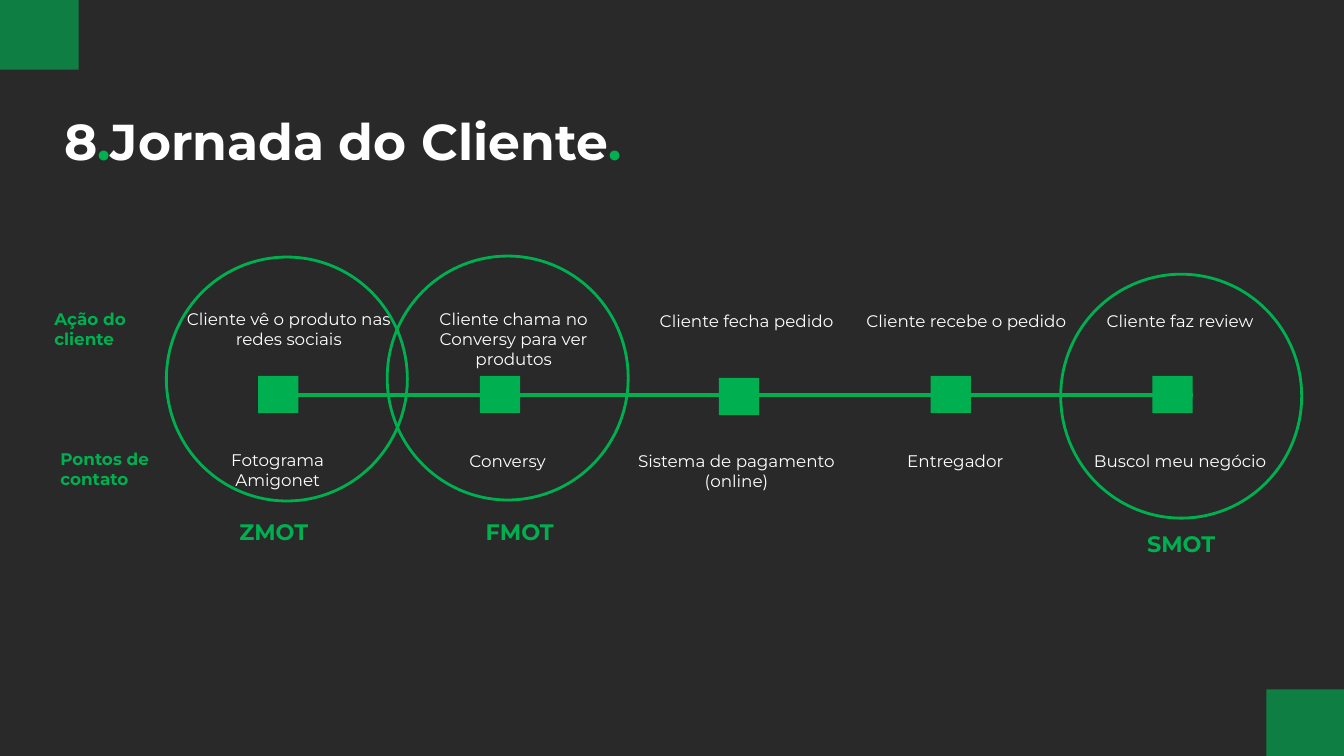
import dataclasses

import pptx
import pptx.dml.color
import pptx.enum.shapes
import pptx.enum.text
import pptx.util
from lxml import etree

Inches = pptx.util.Inches
SHAPES = pptx.enum.shapes.MSO_SHAPE
ALIGN = pptx.enum.text.PP_ALIGN


def rgb(code):
    return pptx.dml.color.RGBColor.from_string(code)


@dataclasses.dataclass(frozen=True)
class Theme:
    font: str = "Montserrat"
    background: object = rgb("292929")
    corner: object = rgb("0F7E42")
    green: object = rgb("00B050")
    white: object = rgb("FFFFFF")
    title_size: int = 36
    moment_size: int = 16
    body_size: int = 12
    track_width: int = 3
    circle_width: int = 2


THEME = Theme()

STEPS = [
    (2.56, 3.73, (1.73, 2.96), "Cliente vê o produto nas redes sociais",
     (1.62, 4.36), ["Fotograma", "Amigonet"]),
    (4.76, 3.73, (3.96, 2.96), "Cliente chama no Conversy para ver produtos",
     (3.9, 4.37), ["Conversy"]),
    (7.13, 3.75, (6.27, 2.98), "Cliente fecha pedido",
     (6.17, 4.37), ["Sistema de pagamento (online)"]),
    (9.23, 3.73, (8.45, 2.98), "Cliente recebe o pedido",
     (8.34, 4.37), ["Entregador"]),
    (11.43, 3.73, (10.57, 2.98), "Cliente faz review",
     (10.57, 4.37), ["Buscol meu negócio"]),
]

ROW_HEADINGS = [
    ("Ação do cliente", (0.44, 2.96)),
    ("Pontos de contato", (0.5, 4.35)),
]

MOMENTS = [
    ("ZMOT", (1.65, 2.55), (2.07, 5.04)),
    ("FMOT", (3.84, 2.54), (4.51, 5.04)),
    ("SMOT", (10.52, 2.72), (11.07, 5.16)),
]


def add_text(slide, place, size, paragraphs, points, bold=False,
             align=ALIGN.LEFT, vertical_inset=0.1):
    box = slide.shapes.add_textbox(*map(Inches, place + size))
    frame = box.text_frame
    frame.word_wrap = True
    frame.margin_left = frame.margin_right = Inches(0.1)
    frame.margin_top = frame.margin_bottom = Inches(vertical_inset)
    for index, pieces in enumerate(paragraphs):
        paragraph = frame.add_paragraph() if index else frame.paragraphs[0]
        paragraph.alignment = align
        for wording, color in pieces:
            run = paragraph.add_run()
            run.text = wording
            run.font.name = THEME.font
            run.font.size = pptx.util.Pt(points)
            run.font.bold = bold
            run.font.color.rgb = color


def add_block(slide, place, size, color):
    block = slide.shapes.add_shape(SHAPES.RECTANGLE, *map(Inches, place + size))
    block.shadow.inherit = False
    block.fill.solid()
    block.fill.fore_color.rgb = color
    block.line.fill.background()


def add_circle(slide, place):
    circle = slide.shapes.add_shape(
        SHAPES.OVAL, *map(Inches, place + (2.39, 2.42)))
    circle.shadow.inherit = False
    circle.fill.background()
    circle.line.color.rgb = THEME.green
    circle.line.width = pptx.util.Pt(THEME.circle_width)


def add_track(slide, left, right, height):
    track = slide.shapes.add_connector(
        pptx.enum.shapes.MSO_CONNECTOR.STRAIGHT,
        Inches(left), Inches(height), Inches(right), Inches(height))
    track.line.color.rgb = THEME.green
    track.line.width = pptx.util.Pt(THEME.track_width)
    etree.SubElement(track._element.spPr, pptx.oxml.ns.qn("a:effectLst"))


def add_step(slide, left, top, action_place, action, contact_place, contacts):
    add_block(slide, (left, top), (0.4, 0.37), THEME.green)
    for place, lines in ((action_place, [action]), (contact_place, contacts)):
        add_text(slide, place, (2.27, 0.94),
                 [[(line, THEME.white)] for line in lines],
                 THEME.body_size, align=ALIGN.CENTER)


def add_moment(slide, name, circle_place, name_place):
    add_circle(slide, circle_place)
    add_text(slide, name_place, (1.29, 0.94), [[(name, THEME.green)]],
             THEME.moment_size, bold=True, align=ALIGN.CENTER)


def main():
    deck = pptx.Presentation()
    deck.slide_width = Inches(13.33)
    deck.slide_height = Inches(7.5)
    slide = deck.slides.add_slide(deck.slide_layouts[6])
    slide.background.fill.solid()
    slide.background.fill.fore_color.rgb = THEME.background

    add_block(slide, (12.56, 6.84), (0.77, 0.66), THEME.corner)
    add_block(slide, (0, 0), (0.78, 0.69), THEME.corner)
    title = [("8", THEME.white), (".", THEME.green),
             ("Jornada do Cliente", THEME.white), (".", THEME.green)]
    add_text(slide, (0.54, 1.04), (7.26, 0.71), [title], THEME.title_size,
             bold=True, vertical_inset=0.05)

    add_track(slide, 2.56, 11.83, 3.92)
    for step in STEPS:
        add_step(slide, *step)
    for heading, place in ROW_HEADINGS:
        add_text(slide, place, (1.29, 0.94), [[(heading, THEME.green)]],
                 THEME.body_size, bold=True)
    for moment in MOMENTS:
        add_moment(slide, *moment)

    deck.save("out.pptx")


if __name__ == "__main__":
    main()
